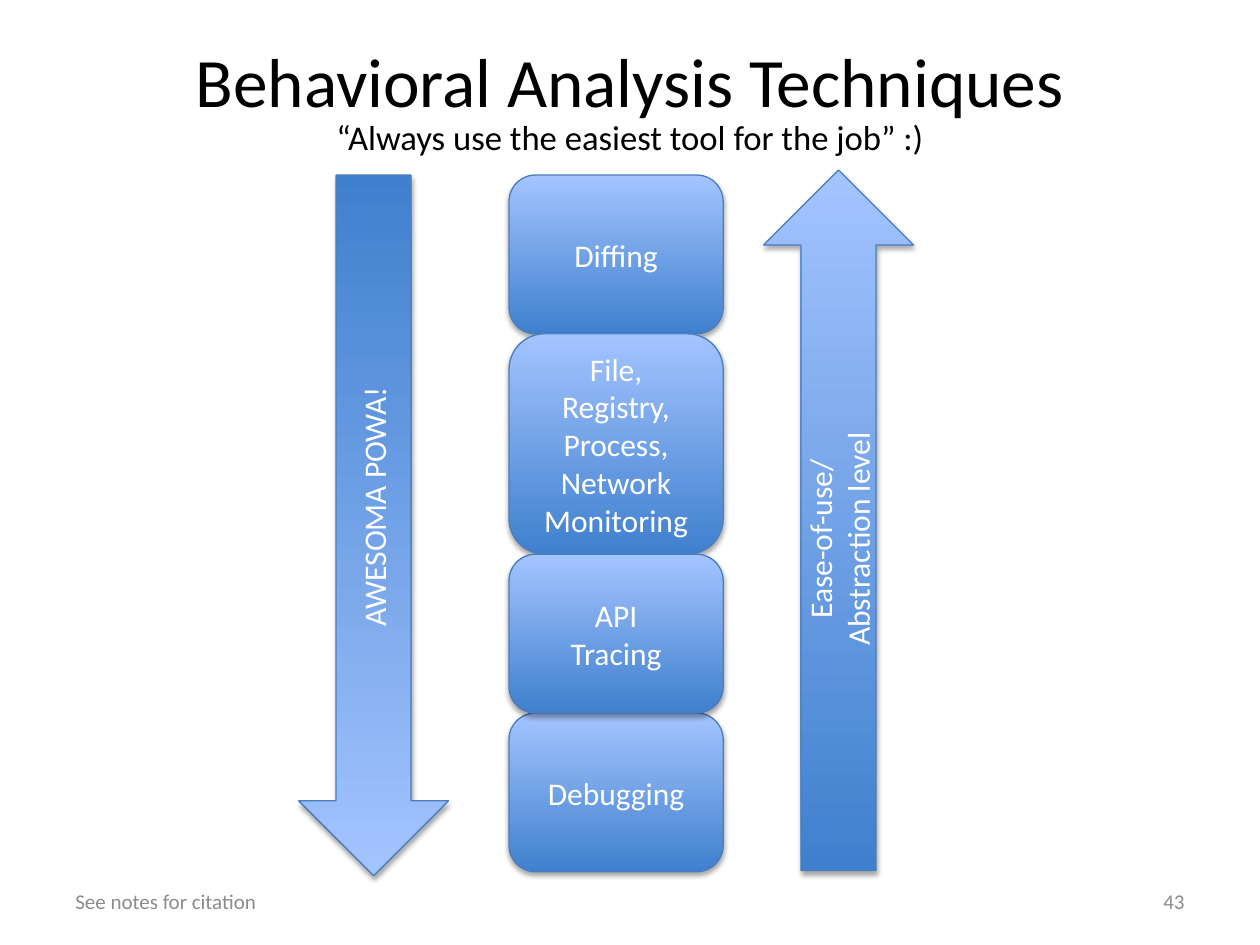
from dataclasses import dataclass
from itertools import accumulate

from lxml.etree import SubElement
from pptx import Presentation
from pptx.dml.color import RGBColor
from pptx.enum.shapes import MSO_SHAPE
from pptx.enum.text import MSO_ANCHOR, PP_ALIGN
from pptx.oxml.ns import qn
from pptx.util import Inches, Pt


@dataclass(frozen=True)
class Theme:
    font: str = "Calibri"
    ink: str = "000000"
    muted: str = "8C8C8C"
    light: str = "FFFFFF"
    deep: str = "3F80CE"
    pale: str = "A4C4FF"
    outline: str = "4B7EBC"
    title: float = 39.6
    subtitle: float = 19.8
    label: float = 18
    footer: float = 12


THEME = Theme()
WIDTH, HEIGHT = Inches(10), Inches(7.5)

HEADING = ["Behavioral Analysis Techniques", "“Always use the easiest tool for the job” :)"]
TECHNIQUES = [
    (["Diffing"], 16.8),
    (["File,", "Registry,", "Process,", "Network", "Monitoring"], 23.33),
    (["API", "Tracing"], 16.8),
    (["Debugging"], 16.8),
]
STACKING = [0, 1, 3, 2]
ARROWS = [
    (["Ease-of-use/", "Abstraction level"], 60.6, 18, 0, "vert270"),
    (["AWESOMA POWA!"], 23.7, 18.53, 180, "vert"),
]
FOOTERS = [
    ("See notes for citation", 5, PP_ALIGN.LEFT),
    ("43", 71.7, PP_ALIGN.RIGHT),
]
STACK_LEFT, STACK_TOP, STACK_WIDTH = 40.4, 18.53, 17
ARROW_WIDTH, ARROW_HEIGHT = 11.9, 74.13


def area(left, top, width, height):
    return (int(WIDTH * left / 100), int(HEIGHT * top / 100),
            int(WIDTH * width / 100), int(HEIGHT * height / 100))


def write(shape, lines, sizes, color, align=PP_ALIGN.CENTER,
          anchor=MSO_ANCHOR.MIDDLE, spacing=None):
    frame = shape.text_frame
    frame.word_wrap = True
    frame.vertical_anchor = anchor
    for index, (line, size) in enumerate(zip(lines, sizes)):
        paragraph = frame.add_paragraph() if index else frame.paragraphs[0]
        paragraph.alignment = align
        if index and spacing:
            paragraph.line_spacing = spacing
        run = paragraph.add_run()
        run.text = line
        run.font.name = THEME.font
        run.font.size = Pt(size)
        run.font.color.rgb = RGBColor.from_string(color)
    return frame


def add_shadow(shape):
    shape.shadow.inherit = False
    effects = shape._element.spPr.find(qn("a:effectLst"))
    shadow = SubElement(effects, qn("a:outerShdw"), blurRad=str(Pt(3.1)),
                        dist=str(Pt(1.8)), dir="5400000", rotWithShape="0")
    shade = SubElement(shadow, qn("a:srgbClr"), val=THEME.ink)
    SubElement(shade, qn("a:alpha"), val="35000")


def add_block(slide, preset, place, lines):
    block = slide.shapes.add_shape(preset, *area(*place))
    block.fill.gradient()
    block.fill.gradient_angle = 90
    for stop, color in zip(block.fill.gradient_stops, (THEME.deep, THEME.pale)):
        stop.color.rgb = RGBColor.from_string(color)
    block.line.color.rgb = RGBColor.from_string(THEME.outline)
    block.line.width = Pt(0.75)
    add_shadow(block)
    write(block, lines, [THEME.label] * len(lines), THEME.light)
    return block


def main():
    deck = Presentation()
    deck.slide_width, deck.slide_height = WIDTH, HEIGHT
    slide = deck.slides.add_slide(deck.slide_layouts[6])

    heading = slide.shapes.add_textbox(*area(5, 4, 90, 16.67))
    frame = write(heading, HEADING, [THEME.title, THEME.subtitle], THEME.ink,
                  anchor=MSO_ANCHOR.TOP, spacing=0.9)
    frame.margin_top = frame.margin_bottom = 0

    for words, left, align in FOOTERS:
        footer = slide.shapes.add_textbox(*area(left, 92.67, 23.3, 5.33))
        write(footer, [words], [THEME.footer], THEME.muted, align=align)

    tops = list(accumulate((height for _, height in TECHNIQUES), initial=STACK_TOP))
    for row in STACKING:
        lines, height = TECHNIQUES[row]
        add_block(slide, MSO_SHAPE.ROUNDED_RECTANGLE,
                  (STACK_LEFT, tops[row], STACK_WIDTH, height), lines)

    for lines, left, top, rotation, direction in ARROWS:
        arrow = add_block(slide, MSO_SHAPE.UP_ARROW,
                          (left, top, ARROW_WIDTH, ARROW_HEIGHT), lines)
        arrow.rotation = rotation
        arrow.text_frame._txBody.bodyPr.set("vert", direction)

    deck.save("out.pptx")


if __name__ == "__main__":
    main()
